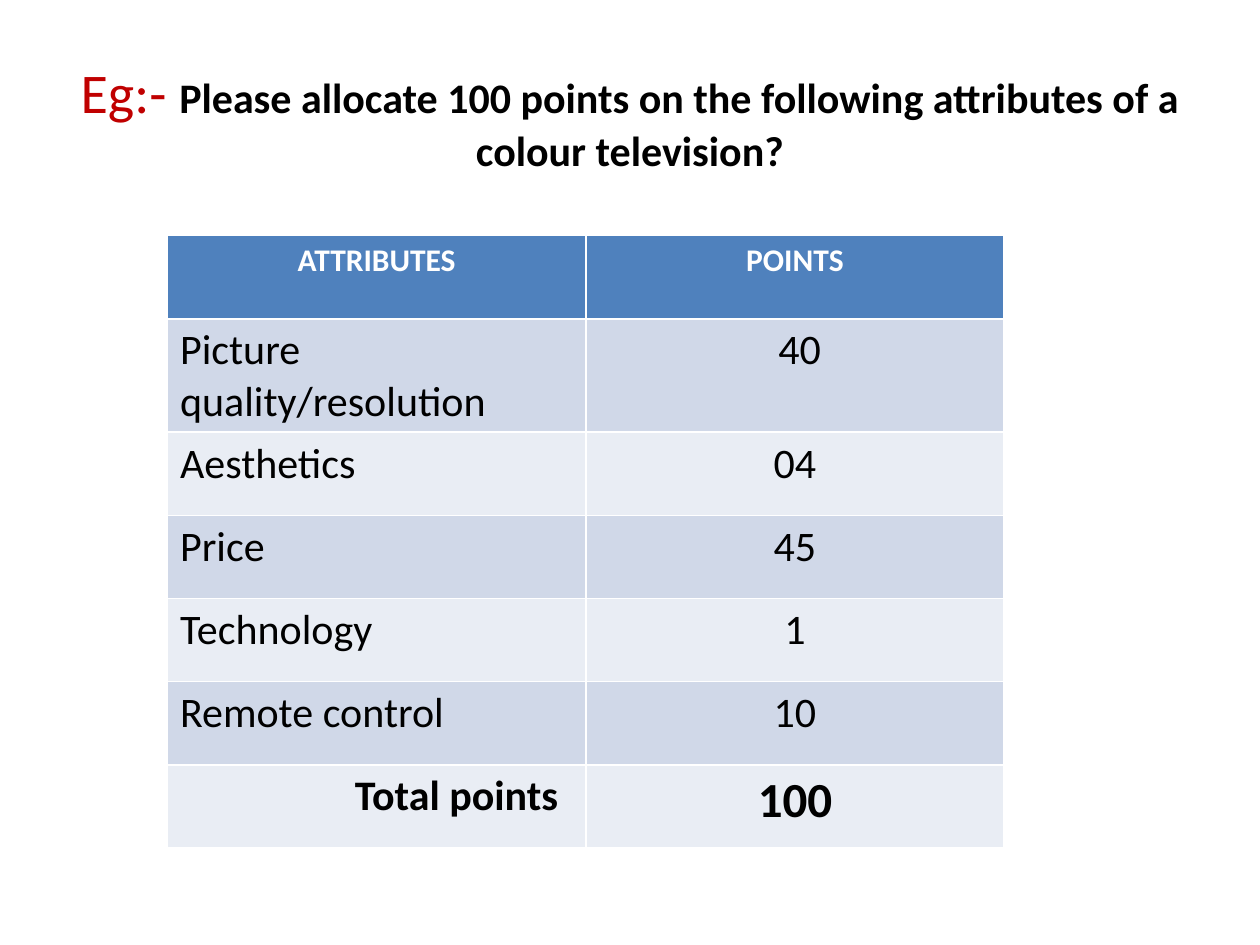
from pptx import Presentation
from pptx.dml.color import RGBColor
from pptx.enum.text import MSO_ANCHOR, PP_ALIGN
from pptx.util import Inches, Pt

LEFT, CENTER, RIGHT = PP_ALIGN.LEFT, PP_ALIGN.CENTER, PP_ALIGN.RIGHT
MIDDLE = MSO_ANCHOR.MIDDLE

# Content
TITLE = [  # text, size, colour, bold
    ("Eg:- ", 32, "C00000", False),
    ("Please allocate 100 points on the following attributes of a colour television?",
     24, "000000", True),
]
HEADER = ("ATTRIBUTES", "POINTS")
POINTS = [
    ("Picture quality/resolution", " 40"),
    ("Aesthetics", "04"),
    ("Price", "45"),
    ("Technology", "1"),
    ("Remote control", "10"),
]
TOTAL = ("Total points", "100")

HEADER_FILL = "4F81BD"
BANDS = ("E9EDF4", "D0D8E8")
COL_W, ROW_H = 3.32, 0.66


def rgb(color):
    return RGBColor.from_string(color)


def style_run(r, size, color, bold):
    r.font.name = "Calibri"
    r.font.size = Pt(size)
    r.font.bold = bold
    r.font.color.rgb = rgb(color)


def fill_cell(cell, text, fill, align, size, color, bold):
    cell.fill.solid()
    cell.fill.fore_color.rgb = rgb(fill)
    cell.text_frame.text = text
    p = cell.text_frame.paragraphs[0]
    p.alignment = align
    style_run(p.runs[0], size, color, bold)


prs = Presentation()
prs.slide_width, prs.slide_height = Inches(10), Inches(7.5)
s = prs.slides.add_slide(prs.slide_layouts[6])

# Title
tf = s.shapes.add_textbox(Inches(0.5), Inches(0.3), Inches(9), Inches(1.25)).text_frame
tf.word_wrap = True
tf.vertical_anchor = MIDDLE
p = tf.paragraphs[0]
p.alignment = CENTER
for text, *style in TITLE:
    r = p.add_run()
    r.text = text
    style_run(r, *style)

# Points table
rows = [HEADER, *POINTS, TOTAL]
table = s.shapes.add_table(len(rows), 2, Inches(1.33), Inches(1.87),
                           Inches(2 * COL_W), Inches(len(rows) * ROW_H)).table
for col in table.columns:
    col.width = Inches(COL_W)
for i, row in enumerate(rows):
    table.rows[i].height = Inches(ROW_H)
    for j, text in enumerate(row):
        cell = table.cell(i, j)
        if row is HEADER:
            fill_cell(cell, text, HEADER_FILL, CENTER, 18, "FFFFFF", True)
        elif row is TOTAL:
            fill_cell(cell, text, BANDS[i % 2], (RIGHT, CENTER)[j], (24, 28)[j],
                      "000000", True)
        else:
            fill_cell(cell, text, BANDS[i % 2], (LEFT, CENTER)[j], 24, "000000", False)
table.cell(len(rows) - 1, 0).margin_right = Inches(0.22)

prs.save("out.pptx")
